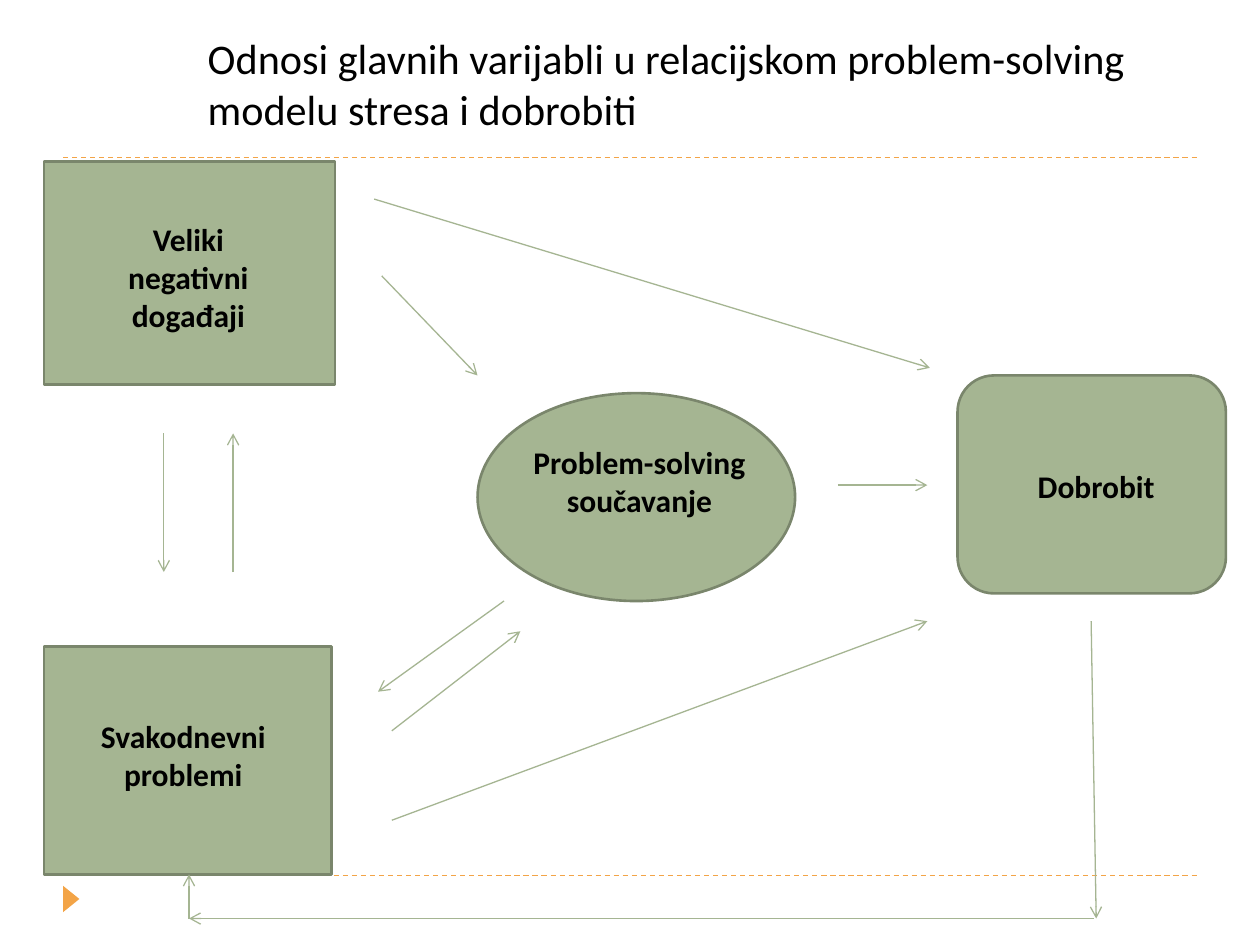
from typing import NamedTuple

from lxml import etree
from pptx import Presentation
from pptx.dml.color import RGBColor
from pptx.enum.dml import MSO_LINE
from pptx.enum.shapes import MSO_CONNECTOR, MSO_SHAPE
from pptx.enum.text import PP_ALIGN
from pptx.oxml.ns import qn
from pptx.util import Emu, Pt

RECT = MSO_SHAPE.RECTANGLE
ROUND = MSO_SHAPE.ROUNDED_RECTANGLE
OVAL = MSO_SHAPE.OVAL
WEDGE = MSO_SHAPE.ISOSCELES_TRIANGLE
STRAIGHT = MSO_CONNECTOR.STRAIGHT
DASH = MSO_LINE.DASH
LEFT = PP_ALIGN.LEFT
CENTER = PP_ALIGN.CENTER

SCALE = 9144
FONT = "Calibri"
GREEN = "A5B592"
EDGE = "7A866C"
ORANGE = "F3A447"
BLACK = "000000"


class Box(NamedTuple):
    x: int
    y: int
    w: int
    h: int


class Node(NamedTuple):
    kind: int
    box: Box
    text: str
    label: Box


class Arrow(NamedTuple):
    x1: int
    y1: int
    x2: int
    y2: int


TITLE = "Odnosi glavnih varijabli u relacijskom problem-solving modelu stresa i dobrobiti"

NODES = [
    Node(RECT, Box(35, 128, 231, 177), "Veliki negativni događaji", Box(67, 170, 165, 101)),
    Node(RECT, Box(35, 513, 228, 181), "Svakodnevni problemi", Box(59, 564, 173, 71)),
    Node(ROUND, Box(760, 298, 213, 173), "Dobrobit", Box(803, 366, 134, 40)),
    Node(OVAL, Box(379, 312, 252, 165), "Problem-solving součavanje", Box(408, 347, 199, 101)),
]

ARROWS = [
    Arrow(297, 158, 738, 292),
    Arrow(311, 651, 736, 493),
    Arrow(303, 219, 379, 298),
    Arrow(665, 385, 736, 385),
    Arrow(311, 580, 413, 501),
    Arrow(400, 477, 300, 549),
    Arrow(185, 454, 185, 344),
    Arrow(130, 344, 130, 454),
    Arrow(866, 493, 870, 729),
    Arrow(868, 729, 150, 729),
    Arrow(150, 729, 150, 694),
]


def px(n: int) -> Emu:
    return Emu(n * SCALE)


def color(code: str) -> RGBColor:
    return RGBColor.from_string(code)


def add_line(slide, path: Arrow, hue: str):
    line = slide.shapes.add_connector(STRAIGHT, *map(px, path))
    line.line.color.rgb = color(hue)
    line.line.width = Pt(0.75)
    etree.SubElement(line._element.spPr, qn("a:effectLst"))
    return line


def add_rule(slide, y: int) -> None:
    add_line(slide, Arrow(50, y, 950, y), ORANGE).line.dash_style = DASH


def add_arrow(slide, path: Arrow) -> None:
    line = add_line(slide, path, GREEN)
    etree.SubElement(line.line._get_or_add_ln(), qn("a:tailEnd"), type="arrow")


def add_shape(slide, kind: int, box: Box, hue: str):
    shape = slide.shapes.add_shape(kind, *map(px, box))
    shape.shadow.inherit = False
    shape.fill.solid()
    shape.fill.fore_color.rgb = color(hue)
    shape.line.fill.background()
    return shape


def add_text(slide, box: Box, text: str, size: float, bold: bool, align: int):
    frame = slide.shapes.add_textbox(*map(px, box)).text_frame
    frame.word_wrap = True
    frame.text = text
    par = frame.paragraphs[0]
    par.alignment = align
    font = par.runs[0].font
    font.name = FONT
    font.size = Pt(size)
    font.bold = bold
    font.color.rgb = color(BLACK)
    return par


def main() -> None:
    deck = Presentation()
    deck.slide_width, deck.slide_height = px(1000), px(750)
    slide = deck.slides.add_slide(deck.slide_layouts[6])

    for y in (695, 125):
        add_rule(slide, y)
    add_shape(slide, WEDGE, Box(46, 707, 21, 13), ORANGE).rotation = 90

    title = add_text(slide, Box(146, 21, 811, 79), TITLE, 24.1, False, LEFT)
    title._p.get_or_add_pPr().set("marL", str(px(9)))

    for node in NODES:
        shape = add_shape(slide, node.kind, node.box, GREEN)
        shape.line.color.rgb = color(EDGE)
        shape.line.width = Pt(1.5)
    for path in ARROWS:
        add_arrow(slide, path)
    for node in NODES:
        add_text(slide, node.label, node.text, 18, True, CENTER)

    deck.save("out.pptx")


if __name__ == "__main__":
    main()
